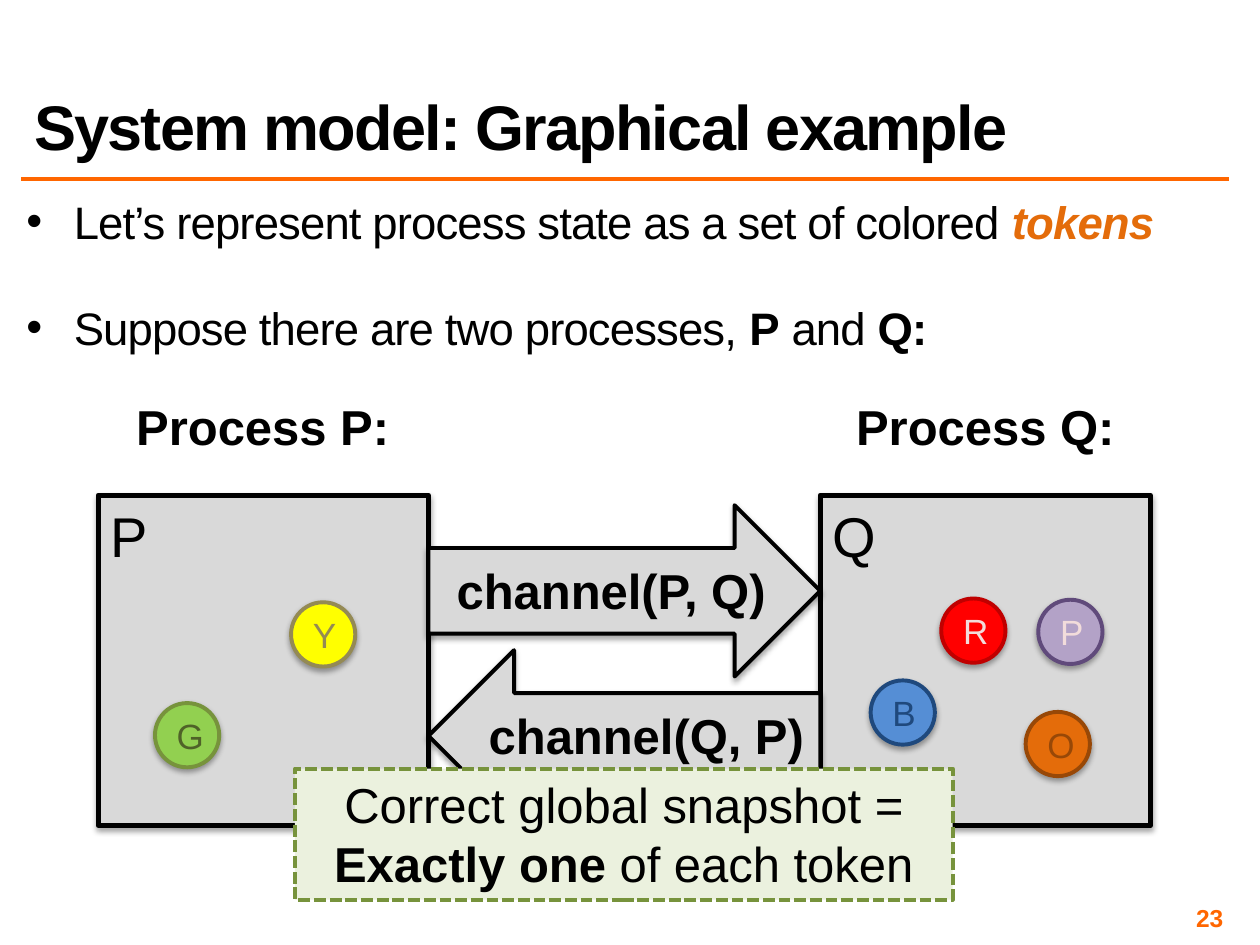
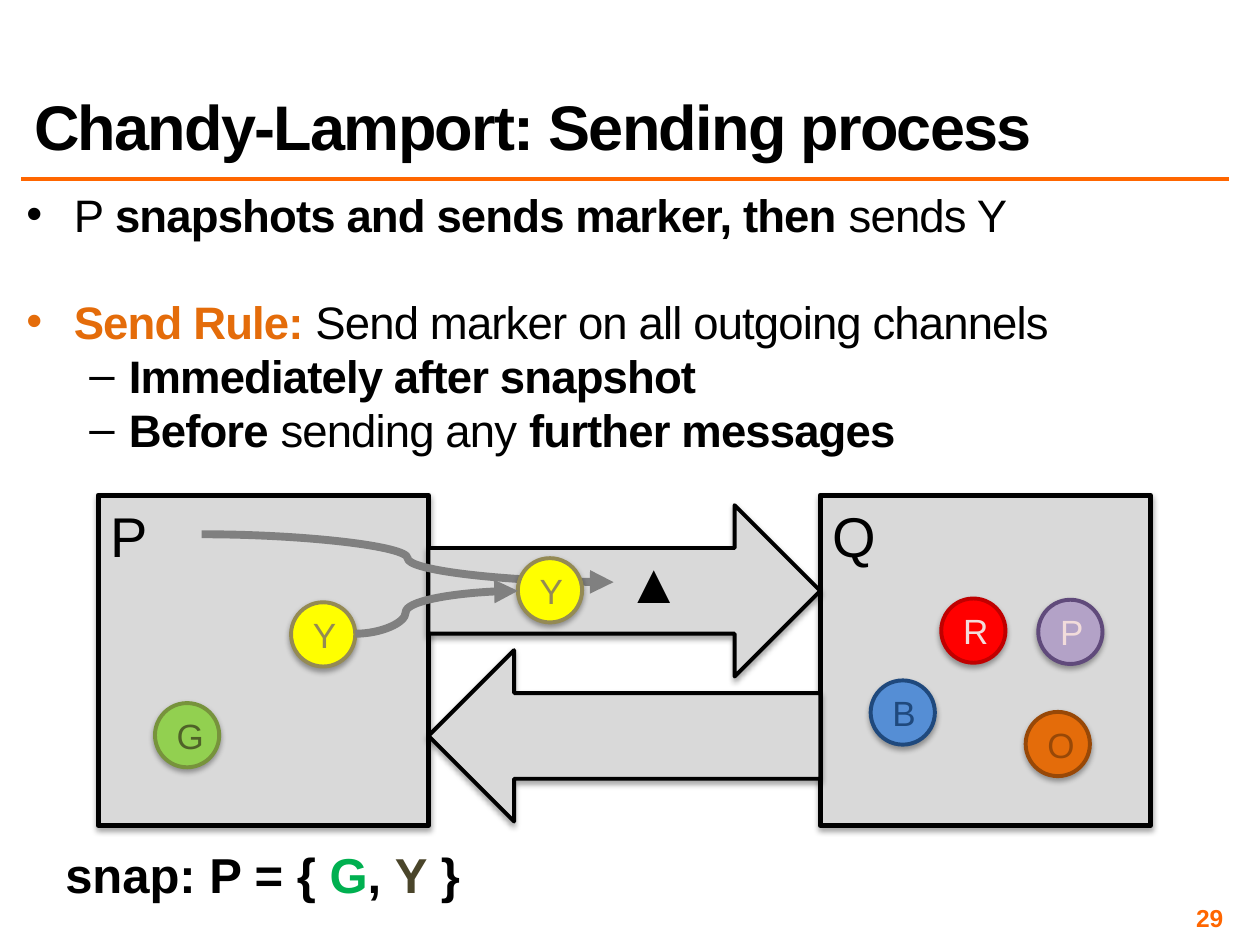
from lxml.etree import SubElement
from pptx import Presentation
from pptx.dml.color import RGBColor
from pptx.enum.dml import MSO_LINE
from pptx.enum.shapes import MSO_CONNECTOR, MSO_SHAPE
from pptx.enum.text import MSO_ANCHOR, MSO_AUTO_SIZE, PP_ALIGN
from pptx.oxml.ns import qn
from pptx.util import Inches, Pt

FONT = "Arial"
BLACK = RGBColor(0x00, 0x00, 0x00)
ACCENT = RGBColor(0xFF, 0x66, 0x00)
EMPHASIS = RGBColor(0xE4, 0x6C, 0x0A)
PANEL = RGBColor(0xD9, 0xD9, 0xD9)
PATH_GRAY = RGBColor(0x80, 0x80, 0x80)
NOTE_FILL = RGBColor(0xEB, 0xF1, 0xDE)
OLIVE = RGBColor(0x77, 0x93, 0x3C)
DARK_OLIVE = RGBColor(0x4F, 0x62, 0x28)
LIME = RGBColor(0x92, 0xD0, 0x50)
GREEN = RGBColor(0x00, 0xB0, 0x50)
YELLOW = RGBColor(0xFF, 0xFF, 0x00)
KHAKI = RGBColor(0x94, 0x8A, 0x54)
DARK_KHAKI = RGBColor(0x4A, 0x45, 0x2A)
RED = RGBColor(0xFF, 0x00, 0x00)
DARK_RED = RGBColor(0xC0, 0x00, 0x00)
PINK = RGBColor(0xF2, 0xDC, 0xDB)
BLUE = RGBColor(0x55, 0x8E, 0xD5)
NAVY = RGBColor(0x1F, 0x49, 0x7D)
BROWN = RGBColor(0x98, 0x48, 0x07)
LILAC = RGBColor(0xB3, 0xA2, 0xC7)
PURPLE = RGBColor(0x60, 0x4A, 0x7B)

BOLD = {"bold": True}
MARGIN, CONTENT_W = 0.17, 9.58
BOX_TOP, BOX_SIZE = 3.93, 2.62
P_LEFT, Q_LEFT = 0.78, 6.51
CHANNEL_LEFT = P_LEFT + BOX_SIZE
CHANNEL_W, CHANNEL_H = Q_LEFT - CHANNEL_LEFT, 1.36
TOKEN_SIZE = 0.51
YELLOW_TOKEN = ("Y", YELLOW, KHAKI, KHAKI)
TOKENS = [
    (7.47, 4.75, "R", RED, DARK_RED, PINK),
    (1.23, 5.58, "G", LIME, OLIVE, DARK_OLIVE),
    (6.91, 5.4, "B", BLUE, NAVY, NAVY),
    (2.31, 4.78, *YELLOW_TOKEN),
    (8.14, 5.65, "O", EMPHASIS, BROWN, BROWN),
    (8.24, 4.76, "P", LILAC, PURPLE, PINK),
]


def inches(*values):
    return [Inches(v) for v in values]


def write(p, runs, size=28, color=BLACK, bold=False, italic=False, spacing=0, align=PP_ALIGN.LEFT):
    """Fill a paragraph; a run is a string or (string, format that differs)."""
    p.alignment = align
    for run in [runs] if isinstance(runs, str) else runs:
        text, own = (run, {}) if isinstance(run, str) else run
        r = p.add_run()
        r.text = text
        r.font.name = FONT
        r.font.size = Pt(size)
        r.font.color.rgb = own.get("color", color)
        r.font.bold = own.get("bold", bold)
        r.font.italic = own.get("italic", italic)
        if spacing:
            r.font._element.set("spc", str(round(spacing * 100)))


def set_insets(tf, inset):
    tf.margin_left = tf.margin_right = tf.margin_top = tf.margin_bottom = Inches(inset)


def place(shape, left, top, width, height):
    shape.left, shape.top, shape.width, shape.height = inches(left, top, width, height)


def add_shadow(shape):
    shape.shadow.inherit = False
    effects = shape._element.spPr.find(qn("a:effectLst"))
    shadow = SubElement(effects, qn("a:outerShdw"), blurRad="40000", dist="23000",
                        dir="5400000", rotWithShape="0")
    black = SubElement(shadow, qn("a:srgbClr"), val="000000")
    SubElement(black, qn("a:alpha"), val="35000")


def add_panel(s, kind, at, fill, line, weight=2.25, shadow=True):
    sp = s.shapes.add_shape(kind, *inches(*at))
    sp.fill.solid()
    sp.fill.fore_color.rgb = fill
    sp.line.color.rgb = line
    sp.line.width = Pt(weight)
    if shadow:
        add_shadow(sp)
    else:
        sp.shadow.inherit = False
    return sp


def add_label(s, at, runs, wrap=False, **style):
    tf = s.shapes.add_textbox(*inches(*at)).text_frame
    tf.word_wrap = wrap
    write(tf.paragraphs[0], runs, **style)
    return tf


def add_line(s, kind, start, end, color, weight):
    line = s.shapes.add_connector(kind, *inches(*start, *end))
    line.line.color.rgb = color
    line.line.width = Pt(weight)
    SubElement(line._element.spPr, qn("a:effectLst"))
    return line


def add_curved_arrow(s, start, end, bend=0.5):
    """Bend is the share of the width at which the curve turns."""
    curve = add_line(s, MSO_CONNECTOR.CURVE, start, end, PATH_GRAY, 4.5)
    SubElement(curve.line._get_or_add_ln(), qn("a:tailEnd"), type="triangle")
    guides = curve._element.spPr.find(qn("a:prstGeom")).get_or_add_avLst()
    SubElement(guides, qn("a:gd"), name="adj1", fmla=f"val {round(bend * 100000)}")


def add_process(s, left, name):
    sp = add_panel(s, MSO_SHAPE.RECTANGLE, (left, BOX_TOP, BOX_SIZE, BOX_SIZE), PANEL, BLACK, 3)
    sp.text_frame.vertical_anchor = MSO_ANCHOR.TOP
    write(sp.text_frame.paragraphs[0], name, size=32)


def add_channel(s, top, rotation=0):
    at = (CHANNEL_LEFT, top, CHANNEL_W, CHANNEL_H)
    add_panel(s, MSO_SHAPE.RIGHT_ARROW, at, PANEL, BLACK).rotation = rotation


def add_token(s, left, top, letter, fill, line, color):
    sp = add_panel(s, MSO_SHAPE.OVAL, (left, top, TOKEN_SIZE, TOKEN_SIZE), fill, line)
    sp.text_frame.vertical_anchor = MSO_ANCHOR.MIDDLE
    write(sp.text_frame.paragraphs[0], letter, size=20, color=color, align=PP_ALIGN.CENTER)


def add_system(s):
    """Both processes, the channels between them and the tokens."""
    add_process(s, P_LEFT, "P")
    add_process(s, Q_LEFT, "Q")
    add_channel(s, 4.01)
    add_channel(s, 5.16, rotation=180)
    for token in TOKENS:
        add_token(s, *token)


def add_body(s, top, height, items):
    """Items are (level, space before in points, runs)."""
    body = s.placeholders[1]
    place(body, MARGIN, top, CONTENT_W, height)
    tf = body.text_frame
    tf.auto_size = MSO_AUTO_SIZE.NONE
    tf.vertical_anchor = MSO_ANCHOR.TOP
    set_insets(tf, 0.04)
    for i, (level, before, runs) in enumerate(items):
        p = tf.add_paragraph() if i else tf.paragraphs[0]
        p.level = level
        p.line_spacing = 0.8
        p.space_before = Pt(before)
        write(p, runs, size=26, spacing=-0.5)


def new_slide(prs, title, number):
    s = prs.slides.add_slide(prs.slide_layouts[1])
    add_line(s, MSO_CONNECTOR.STRAIGHT, (MARGIN, 1.42), (MARGIN + CONTENT_W, 1.42), ACCENT, 2)
    place(s.shapes.title, MARGIN, 0.17, CONTENT_W, 1.17)
    tf = s.shapes.title.text_frame
    tf.auto_size = MSO_AUTO_SIZE.NONE
    tf.vertical_anchor = MSO_ANCHOR.BOTTOM
    tf.paragraphs[0].line_spacing = 0.8
    write(tf.paragraphs[0], title, size=36, bold=True, spacing=-1)
    tf = add_label(s, (7.42, 7.17, 2.33, 0.23), number, wrap=True,
                   size=14, color=ACCENT, bold=True, align=PP_ALIGN.RIGHT)
    tf.vertical_anchor = MSO_ANCHOR.MIDDLE
    set_insets(tf, 0.04)
    return s


def add_model_slide(prs):
    s = new_slide(prs, "System model: Graphical example", "23")
    add_body(s, 1.58, 1.51, [
        (0, 6, ["Let’s represent process state as a set of colored ",
                ("tokens", {"color": EMPHASIS, "bold": True, "italic": True})]),
        (0, 36, ["Suppose there are two processes, ", ("P", BOLD), " and ", ("Q:", BOLD)]),
    ])
    add_system(s)
    for left, top, width, text in [
        (0.97, 3.1, 2.23, "Process P:"),
        (6.68, 3.1, 2.28, "Process Q:"),
        (3.51, 4.4, 2.68, "channel(P, Q)"),
        (3.76, 5.55, 2.74, "channel(Q, P)"),
    ]:
        add_label(s, (left, top, width, 0.57), text, bold=True, align=PP_ALIGN.CENTER)
    note = add_panel(s, MSO_SHAPE.RECTANGLE, (2.34, 6.1, 5.22, 1.04), NOTE_FILL, OLIVE, shadow=False)
    note.line.dash_style = MSO_LINE.SQUARE_DOT
    note.text_frame.vertical_anchor = MSO_ANCHOR.TOP
    write(note.text_frame.paragraphs[0],
          ["Correct global snapshot = ", ("Exactly one ", BOLD), "of each token"],
          align=PP_ALIGN.CENTER)


def add_sending_slide(prs):
    s = new_slide(prs, "Chandy-Lamport: Sending process", "29")
    add_body(s, 1.53, 2.28, [
        (0, 6, ["P ", ("snapshots and sends marker, then", BOLD), " sends Y"]),
        (0, 36, [("Send Rule: ", {"color": EMPHASIS, "bold": True}),
                 "Send marker on all outgoing channels"]),
        (1, 6, [("Immediately after snapshot", BOLD)]),
        (1, 6, [("Before", BOLD), " sending any ", ("further messages", BOLD)]),
    ])
    add_system(s)
    add_label(s, (0.42, 6.65, 3.33, 0.57),
              ["snap: P = { ", ("G", {"color": GREEN}), ", ", ("Y", {"color": DARK_KHAKI}), " }"],
              bold=True, align=PP_ALIGN.CENTER)
    add_label(s, (4.87, 4.3, 0.65, 0.64), "▲", size=32, bold=True, align=PP_ALIGN.CENTER)
    add_curved_arrow(s, (1.6, 4.24), (4.87, 4.62))
    add_token(s, 4.11, 4.43, *YELLOW_TOKEN)
    add_curved_arrow(s, (2.82, 5.03), (4.11, 4.69), bend=0.31)


def main():
    prs = Presentation()
    prs.slide_width, prs.slide_height = inches(10, 7.5)
    add_model_slide(prs)
    add_sending_slide(prs)
    prs.save("out.pptx")


if __name__ == "__main__":
    main()
